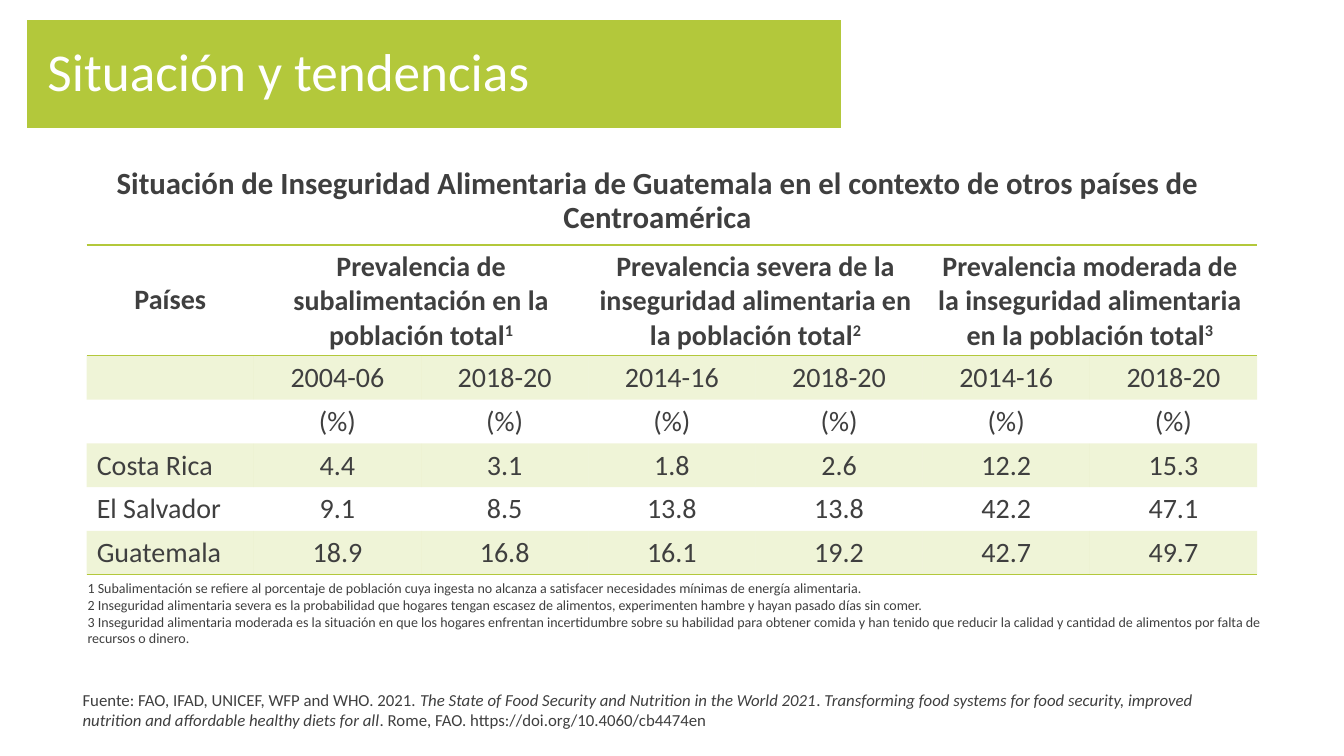
from lxml.etree import SubElement
from pptx import Presentation
from pptx.dml.color import RGBColor
from pptx.enum.text import MSO_ANCHOR, MSO_AUTO_SIZE, PP_ALIGN
from pptx.oxml.ns import qn
from pptx.util import Inches, Pt

GREEN = RGBColor(0xB3, 0xC8, 0x3B)
GREY = RGBColor(0x3F, 0x3F, 0x3F)
WHITE = RGBColor(0xFF, 0xFF, 0xFF)
PLAIN_TABLE_STYLE = "{2D5ABB26-0587-4C30-8999-92F81FD0307C}"

HEADING = ("Situación de Inseguridad Alimentaria de Guatemala en el contexto "
           "de otros países de Centroamérica")
INDICATORS = [
    "Prevalencia de subalimentación en la población total",
    "Prevalencia severa de la inseguridad alimentaria en la población total",
    "Prevalencia moderada de la inseguridad alimentaria en la población total",
]
ROWS = [
    ["", "2004-06", "2018-20", "2014-16", "2018-20", "2014-16", "2018-20"],
    [""] + ["(%)"] * 6,
    ["Costa Rica", "4.4", "3.1", "1.8", "2.6", "12.2", "15.3"],
    ["El Salvador", "9.1", "8.5", "13.8", "13.8", "42.2", "47.1"],
    ["Guatemala", "18.9", "16.8", "16.1", "19.2", "42.7", "49.7"],
]
FOOTNOTES = [
    "1 Subalimentación se refiere al porcentaje de población cuya ingesta no "
    "alcanza a satisfacer necesidades mínimas de energía alimentaria.",
    "2 Inseguridad alimentaria severa es la probabilidad que hogares tengan "
    "escasez de alimentos, experimenten hambre y hayan pasado días sin comer.",
    "3 Inseguridad alimentaria moderada es la situación en que los hogares "
    "enfrentan incertidumbre sobre su habilidad para obtener comida y han tenido "
    "que reducir la calidad y cantidad de alimentos por falta de recursos o dinero.",
]
# Pieces of the source line, upright and italic in turn
SOURCE = [
    "Fuente: FAO, IFAD, UNICEF, WFP and WHO. 2021. ",
    "The State of Food Security and Nutrition in the World 2021",
    ". ",
    "Transforming food systems for food security, improved nutrition and "
    "affordable healthy diets for all",
    ". Rome, FAO. https://doi.org/10.4060/cb4474en",
]


def add_text(paragraph, text, size=20, color=GREY, bold=False, italic=False,
             superscript=False, align=PP_ALIGN.LEFT, spacing=None):
    """Append one formatted run to the paragraph."""
    paragraph.alignment = align
    if spacing:
        paragraph.line_spacing = spacing
    run = paragraph.add_run()
    run.text = text
    font = run.font
    font.name, font.size, font.bold, font.italic = "Calibri", Pt(size), bold, italic
    font.color.rgb = color
    if superscript:
        run._r.get_or_add_rPr().set("baseline", "30000")


def add_frame(slide, box, grow=False):
    """Add a wrapping text box and return its text frame."""
    frame = slide.shapes.add_textbox(*map(Inches, box)).text_frame
    frame.word_wrap = True
    if grow:
        frame.auto_size = MSO_AUTO_SIZE.SHAPE_TO_FIT_TEXT
    return frame


def add_border(cell, edge):
    line = SubElement(cell._tc.get_or_add_tcPr(), qn(f"a:{edge}"), w=str(Pt(1)))
    fill = SubElement(line, qn("a:solidFill"))
    SubElement(fill, qn("a:srgbClr"), val=str(GREEN))


def tint(cell):
    """Fill the cell with green at 20 % opacity."""
    cell.fill.solid()
    cell.fill.fore_color.rgb = GREEN
    color = cell._tc.tcPr.find(qn("a:solidFill")).find(qn("a:srgbClr"))
    SubElement(color, qn("a:alpha"), val="20000")


def place_title(slide, box):
    title = slide.shapes.title
    title.left, title.top, title.width, title.height = map(Inches, box)
    title.fill.solid()
    title.fill.fore_color.rgb = GREEN
    frame = title.text_frame
    frame.vertical_anchor = MSO_ANCHOR.MIDDLE
    frame.margin_left, frame.margin_right = Inches(0.2), Inches(1.1)
    add_text(frame.paragraphs[0], "Situación y tendencias", size=38,
             color=WHITE, spacing=0.9)


def place_heading(slide, box):
    add_text(add_frame(slide, box).paragraphs[0], HEADING, size=22, bold=True,
             align=PP_ALIGN.CENTER, spacing=0.9)


def place_table(slide, box, header_height=0.91):
    column_count, last_row = len(ROWS[0]), len(ROWS)
    frame = slide.shapes.add_table(last_row + 1, column_count, *map(Inches, box))
    table = frame.table
    table._tbl.tblPr.find(qn("a:tableStyleId")).text = PLAIN_TABLE_STYLE
    for column in table.columns:
        column.width = Inches(box[2] / column_count)
    for index, row in enumerate(table.rows):
        row.height = Inches((box[3] - header_height) / last_row if index else header_height)

    # Borders and bands
    for row, table_row in enumerate(table.rows):
        for cell in table_row.cells:
            if row == 0:
                add_border(cell, "lnT")
            if row in (0, last_row):
                add_border(cell, "lnB")
            if row % 2:
                tint(cell)
            else:
                cell.fill.background()

    # Header with one indicator over each pair of years
    header = table.cell(0, 0)
    header.vertical_anchor = MSO_ANCHOR.MIDDLE
    add_text(header.text_frame.paragraphs[0], "Países", bold=True, align=PP_ALIGN.CENTER)
    for number, indicator in enumerate(INDICATORS, 1):
        header = table.cell(0, 2 * number - 1)
        header.merge(table.cell(0, 2 * number))
        header.vertical_anchor = MSO_ANCHOR.MIDDLE
        paragraph = header.text_frame.paragraphs[0]
        add_text(paragraph, indicator, bold=True, align=PP_ALIGN.CENTER)
        add_text(paragraph, str(number), bold=True, superscript=True,
                 align=PP_ALIGN.CENTER)

    # Years, units and countries
    for row, values in enumerate(ROWS, 1):
        for column, value in enumerate(values):
            if not value:
                continue
            cell = table.cell(row, column)
            if column:
                cell.vertical_anchor = MSO_ANCHOR.MIDDLE
            add_text(cell.text_frame.paragraphs[0], value,
                     align=PP_ALIGN.CENTER if column else PP_ALIGN.LEFT)


def place_footnotes(slide, box):
    frame = add_frame(slide, box, grow=True)
    for index, note in enumerate(FOOTNOTES):
        paragraph = frame.add_paragraph() if index else frame.paragraphs[0]
        add_text(paragraph, note, size=10)


def place_source(slide, box):
    paragraph = add_frame(slide, box, grow=True).paragraphs[0]
    for index, piece in enumerate(SOURCE):
        add_text(paragraph, piece, size=12, italic=index % 2 == 1)


def main():
    presentation = Presentation()
    presentation.slide_width, presentation.slide_height = Inches(13.33), Inches(7.5)
    slide = presentation.slides.add_slide(presentation.slide_layouts[5])
    place_title(slide, (0.27, 0.2, 8.07, 1.07))
    place_heading(slide, (0.77, 1.62, 11.5, 0.82))
    place_table(slide, (0.86, 2.43, 11.61, 3.06))
    place_source(slide, (0.72, 6.79, 11.61, 0.5))
    place_footnotes(slide, (0.77, 5.7, 11.92, 0.77))
    presentation.save("out.pptx")


if __name__ == "__main__":
    main()
